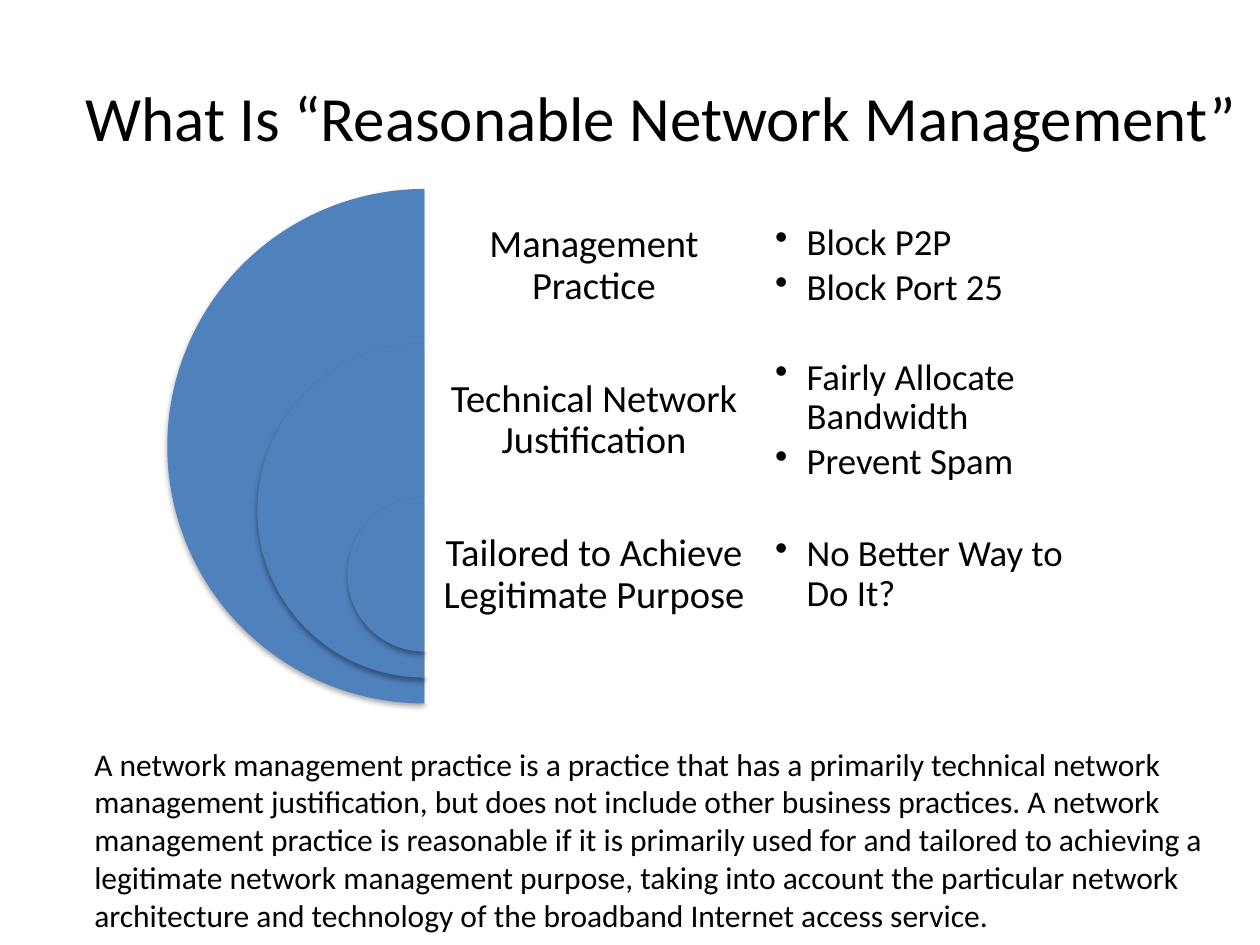
from pptx import Presentation
from pptx.dml.color import RGBColor
from pptx.enum import shapes, text
from pptx.oxml import parse_xml
from pptx.oxml.ns import nsdecls, qn
from pptx.util import Pt

MID, TOP, ROW, COL = 242.6, 108, 88.2, 193.7
DIAM, STEP = 294, 103

RINGS = [
    ("Management Practice", ["Block P2P", "Block Port 25"]),
    ("Technical Network Justification", ["Fairly Allocate Bandwidth", "Prevent Spam"]),
    ("Tailored to Achieve Legitimate Purpose", ["No Better Way to Do It?"]),
]
RULE = (
    "A network management practice is a practice that has a primarily technical "
    "network management justification, but does not include other business "
    "practices. A network management practice is reasonable if it is primarily "
    "used for and tailored to achieving a legitimate network management purpose, "
    "taking into account the particular network architecture and technology of "
    "the broadband Internet access service."
)

LABEL = {"alignment": text.PP_ALIGN.CENTER, "line_spacing": 0.9, "space_after": Pt(7.7)}
POINT = {"line_spacing": 0.9, "space_after": Pt(3.15)}


def color(code):
    return RGBColor.from_string(code)


def apply(item, form):
    for name, value in form.items():
        setattr(item, name, value)


def add_dot(para):
    props = para._p.get_or_add_pPr()
    props.set("marL", str(Pt(18)))
    props.set("indent", str(Pt(-18)))
    props.append(parse_xml(f'<a:buChar {nsdecls("a")} char="•"/>'))


def add_text(slide, area, lines, size, form=None, inset=(7.2, 3.6),
             anchor=text.MSO_ANCHOR.MIDDLE, dots=False):
    frame = slide.shapes.add_textbox(*map(Pt, area)).text_frame
    side, edge = map(Pt, inset)
    apply(frame, {
        "word_wrap": True, "vertical_anchor": anchor,
        "margin_left": side, "margin_right": side,
        "margin_top": edge, "margin_bottom": edge,
    })
    for n, line in enumerate(lines):
        para = frame.add_paragraph() if n else frame.paragraphs[0]
        para.text = line
        if dots:
            add_dot(para)
        apply(para, form or {})
        apply(para.font, {"name": "Calibri", "size": Pt(size)})
        para.font.color.rgb = color("000000")


def add_shape(slide, kind, area, fill):
    shape = slide.shapes.add_shape(kind, *map(Pt, area))
    shape.shadow.inherit = False
    shape.fill.solid()
    shape.fill.fore_color.rgb = color(fill)
    shape.line.fill.background()
    return shape


def add_pie(slide, area):
    pie = add_shape(slide, shapes.MSO_SHAPE.PIE, area, "4F81BD")
    pie.adjustments[0], pie.adjustments[1] = 54, 162
    pie._element.spPr.find(qn("a:effectLst")).append(parse_xml(
        f'<a:outerShdw {nsdecls("a")} blurRad="{Pt(3.1)}" dist="{Pt(1.8)}" '
        'dir="5400000" rotWithShape="0"><a:srgbClr val="000000">'
        '<a:alpha val="35000"/></a:srgbClr></a:outerShdw>'))


def add_band(slide, area):
    band = add_shape(slide, shapes.MSO_SHAPE.RECTANGLE, area, "FFFFFF")
    tint = band._element.spPr.find(qn("a:solidFill"))[0]
    tint.append(parse_xml(f'<a:alpha {nsdecls("a")} val="90000"/>'))


def add_ring(slide, n, label, points):
    top, size = TOP + n * ROW, DIAM - n * STEP
    add_pie(slide, (MID - size / 2, top, size, size))
    add_band(slide, (MID, top, 2 * COL, size))
    add_text(slide, (MID, top, COL, ROW), [label], 22, LABEL, (6.6, 6.6))
    add_text(slide, (MID + COL, top, COL, ROW), points, 21, POINT, (6.6, 6.6), dots=True)


def main():
    deck = Presentation()
    apply(deck, {"slide_width": Pt(720), "slide_height": Pt(540)})
    slide = deck.slides.add_slide(deck.slide_layouts[6])
    add_text(slide, (42, 21.6, 678, 90), ["What Is “Reasonable Network Management”"], 36)
    for n, (label, points) in enumerate(RINGS):
        add_ring(slide, n, label, points)
    add_text(slide, (46.8, 422, 672, 116.6), [RULE], 18, anchor=text.MSO_ANCHOR.TOP)
    deck.save("out.pptx")


if __name__ == "__main__":
    main()
